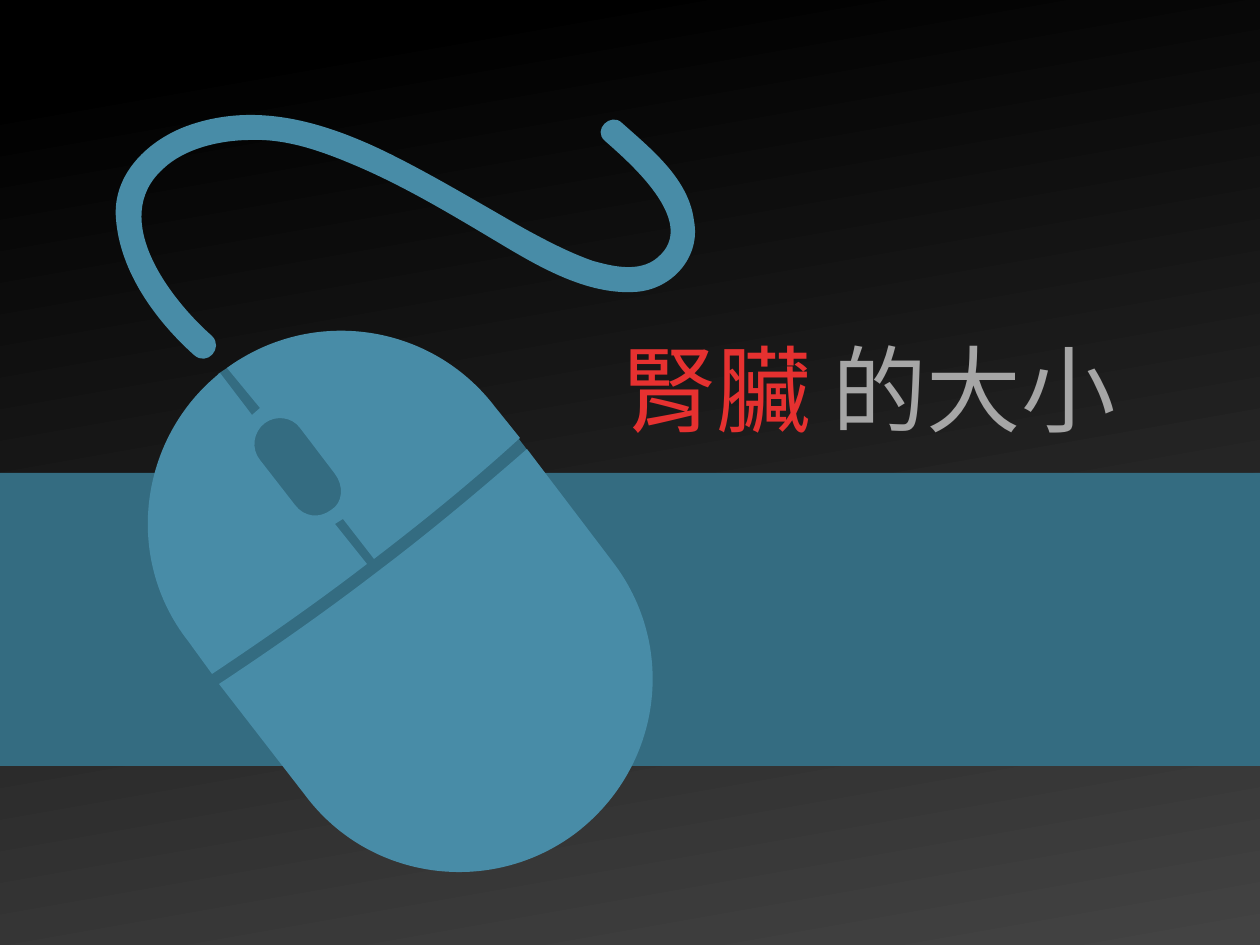
from lxml.etree import SubElement
from pptx import Presentation
from pptx.dml.color import RGBColor
from pptx.enum.lang import MSO_LANGUAGE_ID
from pptx.enum.shapes import MSO_SHAPE
from pptx.enum.text import MSO_AUTO_SIZE, PP_ALIGN
from pptx.oxml.ns import qn
from pptx.util import Pt

SCALE = 914400 / 126
BLACK = RGBColor(0x00, 0x00, 0x00)
GREY = RGBColor(0x43, 0x43, 0x43)
DARK = RGBColor(0x34, 0x6C, 0x81)
BLUE = RGBColor(0x48, 0x8C, 0xA7)
RED = RGBColor(0xE6, 0x31, 0x30)
SILVER = RGBColor(0xA6, 0xA6, 0xA6)


def emu(px):
    return round(px * SCALE)


def draw(shapes, color, *loops, curved=True):
    """Draw closed loops; a curved part is a cubic, or a lone end point."""
    pen = None
    for start, *parts in loops:
        x, y = map(emu, start)
        if pen is None:
            pen = shapes.build_freeform(x, y, scale=1.0)
        else:
            pen.move_to(x, y)
        points = []
        for part in parts:
            if curved and len(part) == 2:
                part = part * 3
            points += zip(map(emu, part[::2]), map(emu, part[1::2]))
        pen.add_line_segments(points, close=True)
    shape = pen.convert_to_shape()
    shape.shadow.inherit = False
    shape.fill.solid()
    shape.fill.fore_color.rgb = color
    shape.line.fill.background()
    if curved:
        # Join every three points into one cubic curve
        lines = list(shape.element.iter(qn("a:lnTo")))
        for i in range(0, len(lines), 3):
            trail = lines[i].getparent()
            curve = SubElement(trail, qn("a:cubicBezTo"))
            lines[i].addprevious(curve)
            for line in lines[i:i + 3]:
                curve.append(line[0])
                trail.remove(line)


deck = Presentation()
deck.slide_width, deck.slide_height = emu(1260), emu(945)
slide = deck.slides.add_slide(deck.slide_layouts[6])

# Background
back = slide.background.fill
back.gradient()
back.gradient_angle = 280
for stop, (place, color) in zip(back.gradient_stops, [(0.08, BLACK), (1, GREY)]):
    stop.position = place
    stop.color.rgb = color

# Dark base that shows through the gaps of the mouse
draw(slide.shapes, DARK, [
    (199, 456), (218, 374), (239, 360), (509, 426),
    (547, 476), (344, 696), (176, 533), (199, 456)], curved=False)

# Band
band = slide.shapes.add_shape(
    MSO_SHAPE.RECTANGLE, 0, emu(473), emu(1260), emu(293))
band.shadow.inherit = False
band.fill.solid()
band.fill.fore_color.rgb = DARK
band.line.fill.background()

# Title
title = slide.shapes.add_textbox(emu(292), emu(325), emu(1154), emu(127))
frame = title.text_frame
frame.word_wrap = True
frame.auto_size = MSO_AUTO_SIZE.SHAPE_TO_FIT_TEXT
para = frame.paragraphs[0]
para.alignment = PP_ALIGN.CENTER
for text, color in [("腎臟 ", RED), ("的大小", SILVER)]:
    run = para.add_run()
    run.text = text
    run.font.size = Pt(54)
    run.font.name = "Arial"
    run.font.language_id = MSO_LANGUAGE_ID.TRADITIONAL_CHINESE
    run.font.color.rgb = color

# Mouse
mouse = slide.shapes.add_group_shape().shapes

# Buttons, with a hole for the wheel
draw(mouse, BLUE, [
    (520, 438), (495, 407),
    (431, 323, 312, 306, 227, 368), (260, 408), (252, 415), (220, 373),
    (139, 438, 123, 558, 188, 641), (212, 674),
    (263, 640, 315, 604, 367, 564), (335, 524), (343, 519), (374, 559),
    (425, 520, 474, 480, 520, 438),
], [
    (331, 510),
    (319, 519, 304, 517, 295, 505), (260, 460),
    (251, 449, 253, 432, 265, 423),
    (276, 415, 292, 417, 300, 428), (335, 474),
    (344, 486, 343, 503, 331, 510),
])

# Body
draw(mouse, BLUE, [
    (377, 572),
    (325, 612, 272, 649, 219, 684), (305, 795),
    (369, 881, 491, 897, 576, 833),
    (662, 767, 678, 646, 612, 561), (527, 449),
    (480, 490, 430, 532, 377, 572),
])

# Cord
draw(mouse, BLUE, [
    (694, 221),
    (689, 179, 651, 149, 622, 123),
    (611, 112, 592, 130, 605, 141),
    (631, 164, 704, 227, 653, 261),
    (635, 272, 611, 266, 593, 261),
    (570, 253, 547, 241, 525, 229),
    (479, 203, 433, 175, 386, 152),
    (324, 122, 257, 102, 190, 125),
    (149, 139, 112, 174, 116, 219),
    (120, 272, 156, 321, 194, 355),
    (207, 367, 224, 348, 212, 336),
    (171, 300, 108, 219, 163, 169),
    (185, 148, 221, 140, 252, 140),
    (287, 139, 321, 151, 354, 165),
    (404, 186, 452, 215, 499, 243),
    (539, 267, 587, 295, 635, 292),
    (672, 290, 701, 257, 694, 221),
])

deck.save("out.pptx")
